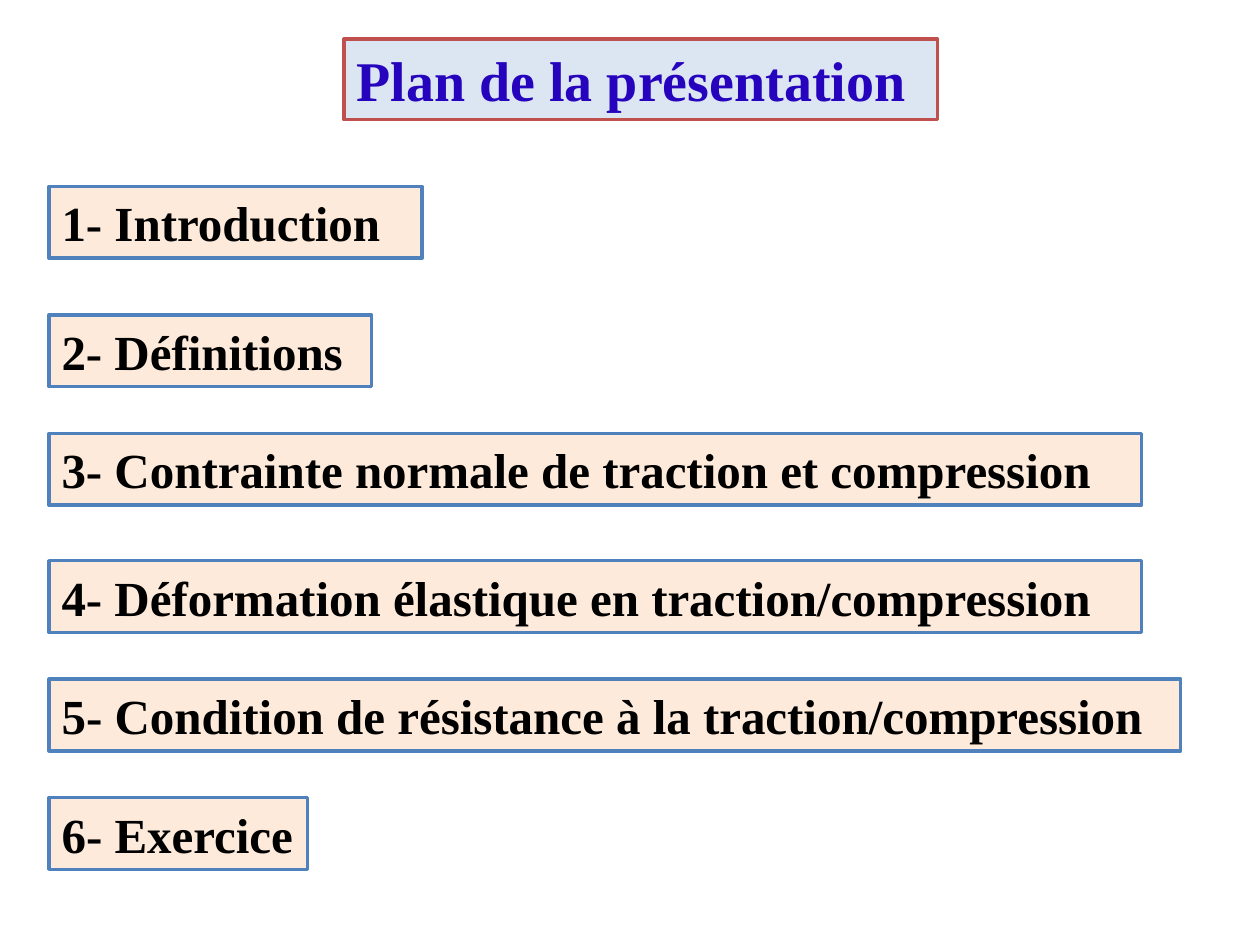
from pptx import Presentation
from pptx import util as u
from pptx.dml import color
from pptx.enum import shapes, text

COLUMNS, ROWS = 100, 75
CELL = u.Inches(0.1)
ITEM_LEFT, ITEM_HEIGHT = 3.9, 5.7
ITEMS = [
    ("1- Introduction", 14.8, 29.6),
    ("2- Définitions", 25, 25.6),
    ("3- Contrainte normale de traction et compression", 34.4, 86.7),
    ("4- Déformation élastique en traction/compression", 44.5, 86.7),
    ("5- Condition de résistance à la traction/compression", 53.9, 89.8),
    ("6- Exercice", 63.3, 20.5),
]


def rgb(value):
    """Turn a hex string into a colour."""
    return color.RGBColor.from_string(value)


def place(shape, box):
    """Place a shape on the grid by left, top, width and height."""
    shape.left, shape.top, shape.width, shape.height = (
        round(length * CELL) for length in box)


def paint(shape, fill, line):
    """Give a shape a solid fill and a two-point outline."""
    shape.fill.solid()
    shape.fill.fore_color.rgb = rgb(fill)
    shape.line.color.rgb = rgb(line)
    shape.line.width = u.Pt(2)


def write(shape, content, size, ink):
    """Write bold left-aligned text in the middle of a shape."""
    frame = shape.text_frame
    frame.word_wrap = True
    frame.auto_size = text.MSO_AUTO_SIZE.NONE
    frame.vertical_anchor = text.MSO_ANCHOR.MIDDLE
    frame.margin_right = 0
    paragraph = frame.paragraphs[0]
    paragraph.alignment = text.PP_ALIGN.LEFT
    run = paragraph.add_run()
    run.text = content
    run.font.name = "Times New Roman"
    run.font.size = u.Pt(size)
    run.font.bold = True
    run.font.color.rgb = rgb(ink)


def add_title(slide, box):
    """Format the title placeholder as a framed heading."""
    title = slide.shapes.title
    place(title, box)
    paint(title, "DCE6F2", "C0504D")
    write(title, "Plan de la présentation", size=32, ink="2603BD")


def add_item(slide, content, box):
    """Add one framed entry of the plan."""
    shape = slide.shapes.add_shape(shapes.MSO_SHAPE.RECTANGLE, 0, 0, 0, 0)
    shape.shadow.inherit = False
    place(shape, box)
    paint(shape, "FDEADA", "4F81BD")
    write(shape, content, size=28, ink="000000")


def main():
    """Build the plan slide and save it."""
    presentation = Presentation()
    presentation.slide_width = COLUMNS * CELL
    presentation.slide_height = ROWS * CELL
    slide = presentation.slides.add_slide(presentation.slide_layouts[5])
    add_title(slide, (27.3, 3.1, 47.1, 6.4))
    for content, top, width in ITEMS:
        add_item(slide, content, (ITEM_LEFT, top, width, ITEM_HEIGHT))
    presentation.save("out.pptx")


if __name__ == "__main__":
    main()
